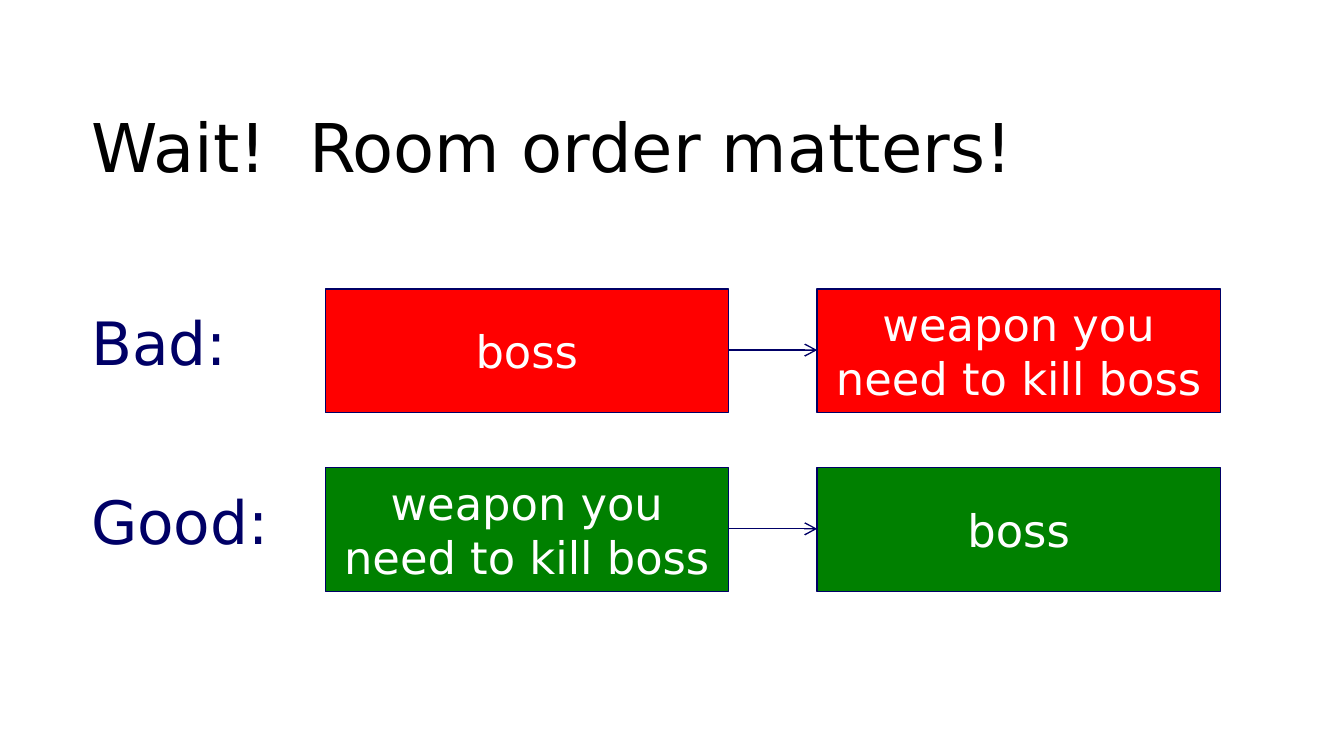
from lxml.etree import SubElement
from pptx import Presentation
from pptx.dml.color import RGBColor
from pptx.enum.shapes import MSO_CONNECTOR, MSO_SHAPE
from pptx.enum.text import MSO_ANCHOR, MSO_AUTO_SIZE, PP_ALIGN
from pptx.oxml.ns import qn
from pptx.util import Inches, Pt

TITLE = "Wait!  Room order matters!"
BOSS, WEAPON = "boss", "weapon you need to kill boss"
ROWS = [
    ("Bad:", 1.26, "red", (BOSS, WEAPON)),
    ("Good:", 1.58, "green", (WEAPON, BOSS)),
]
COLORS = {"black": "000000", "white": "FFFFFF", "navy": "000066",
          "red": "FF0000", "green": "008000"}
FONT = "DejaVu Sans"
LEFT, TOP, ROW_STEP = 0.58, 2.15, 1.33
ROOM_X, ROOM_W, ROOM_H, ROOM_GAP = 2.42, 3, 0.92, 0.66


def rgb(name):
    """Return the named colour."""
    return RGBColor.from_string(COLORS[name])


def set_text(sp, text, size, color, align=PP_ALIGN.LEFT, anchor=MSO_ANCHOR.TOP):
    """Write one formatted paragraph into a shape."""
    tf = sp.text_frame
    tf.text = text
    tf.vertical_anchor = anchor
    p = tf.paragraphs[0]
    p.alignment = align
    font = p.runs[0].font
    font.name, font.size, font.color.rgb = FONT, Pt(size), rgb(color)
    return tf


def set_line(line):
    """Give an outline or arrow the common stroke."""
    line.color.rgb = rgb("navy")
    line.width = Pt(0.75)


def add_label(slide, text, y, width):
    """Add the verdict at the start of a row."""
    sp = slide.shapes.add_textbox(Inches(LEFT), Inches(y), Inches(width), Inches(0.64))
    tf = set_text(sp, text, 32, "navy")
    tf.word_wrap = False
    tf.auto_size = MSO_AUTO_SIZE.SHAPE_TO_FIT_TEXT


def add_room(slide, text, x, y, color):
    """Add a room box."""
    sp = slide.shapes.add_shape(MSO_SHAPE.RECTANGLE, Inches(x), Inches(y),
                                Inches(ROOM_W), Inches(ROOM_H))
    sp.shadow.inherit = False
    sp.fill.solid()
    sp.fill.fore_color.rgb = rgb(color)
    set_line(sp.line)
    tf = set_text(sp, text, 24, "white", PP_ALIGN.CENTER, MSO_ANCHOR.MIDDLE)
    tf.word_wrap = True


def add_arrow(slide, x1, x2, y):
    """Add a horizontal arrow between two rooms."""
    s = slide.shapes.add_connector(MSO_CONNECTOR.STRAIGHT, Inches(x1), Inches(y),
                                   Inches(x2), Inches(y))
    set_line(s.line)
    SubElement(s.get_or_add_ln(), qn("a:tailEnd"), type="arrow")
    SubElement(s.element.spPr, qn("a:effectLst"))


def main():
    """Build and save the slide."""
    prs = Presentation()
    prs.slide_width = Inches(10)
    prs.slide_height = prs.slide_width * 9 // 16
    slide = prs.slides.add_slide(prs.slide_layouts[5])
    title = slide.shapes.title
    title.left, title.top = Inches(LEFT), Inches(0.73)
    title.width, title.height = Inches(8.83), Inches(0.85)
    set_text(title, TITLE, 36, "black")

    for row, (label, width, color, rooms) in enumerate(ROWS):
        y = TOP + row * ROW_STEP
        add_label(slide, label, y + 0.08, width)
        for col, room in enumerate(rooms):
            add_room(slide, room, ROOM_X + col * (ROOM_W + ROOM_GAP), y, color)
        start = ROOM_X + ROOM_W
        add_arrow(slide, start, start + ROOM_GAP, y + 0.455)

    prs.save("out.pptx")


if __name__ == "__main__":
    main()
